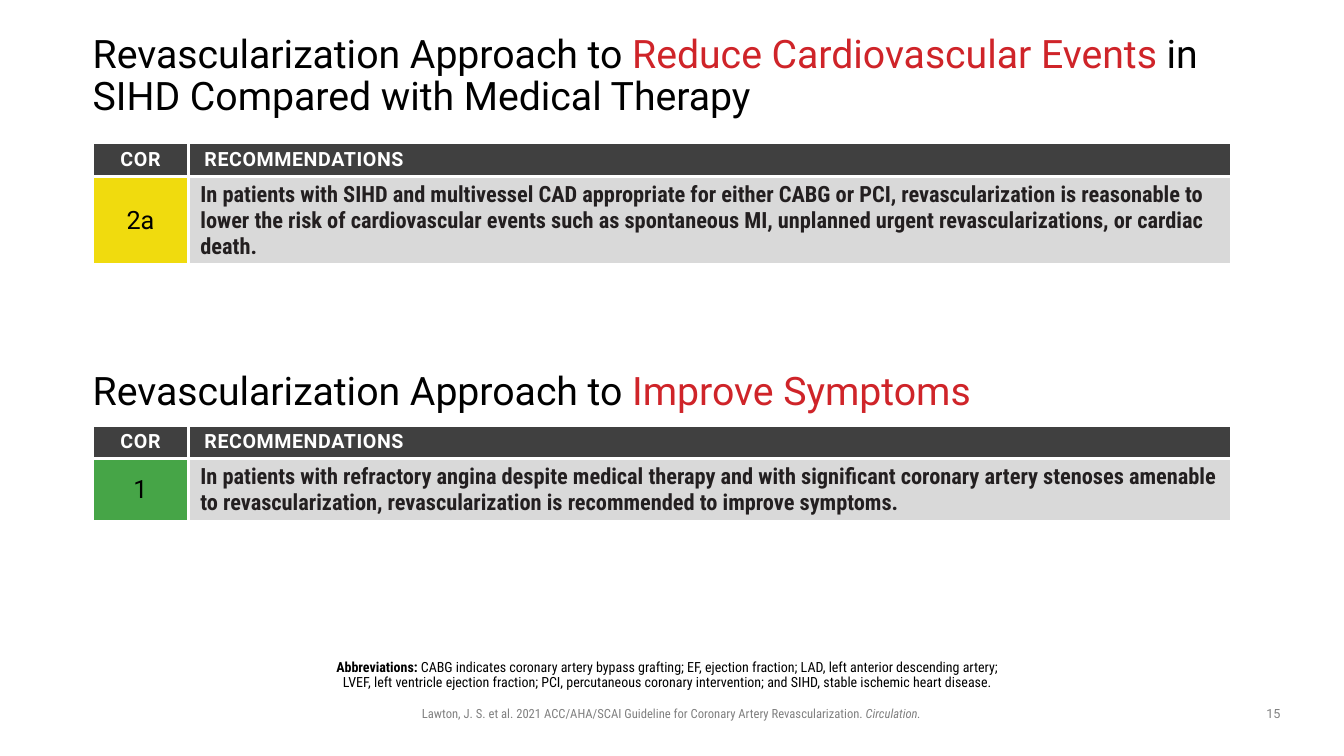
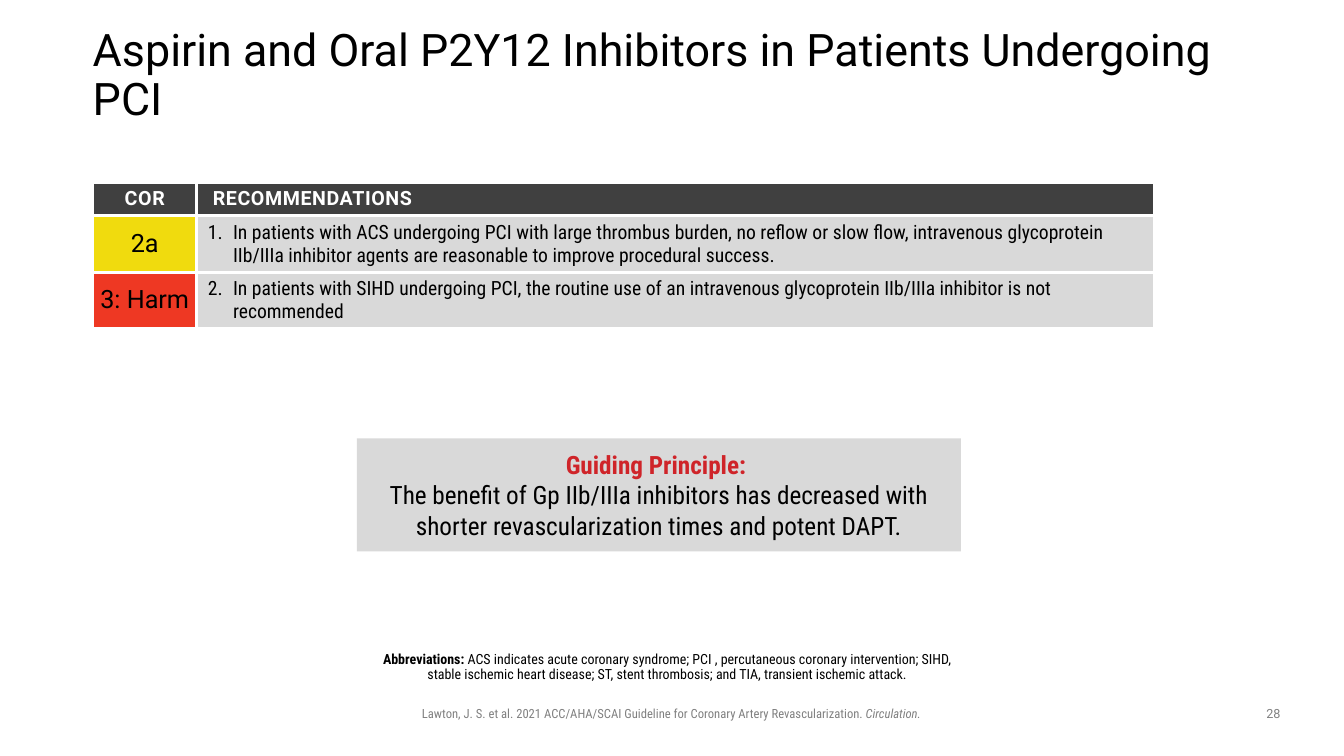
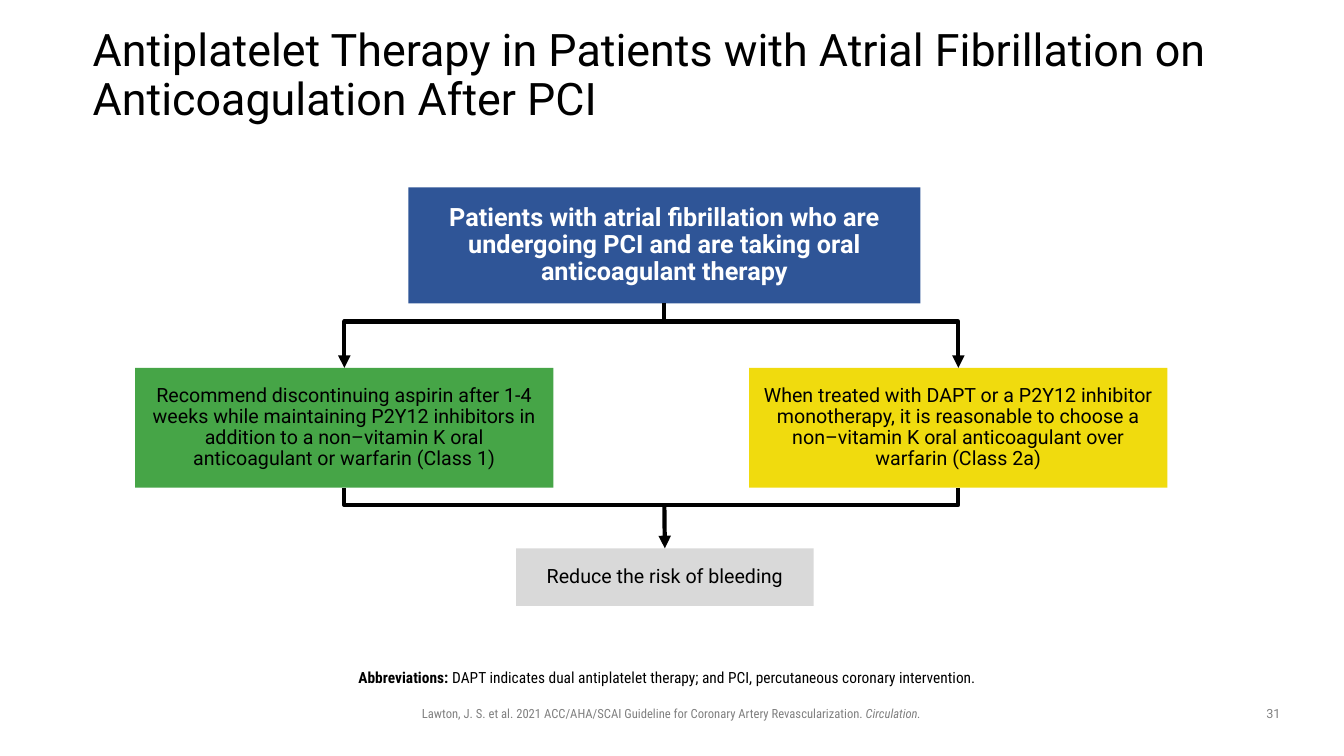
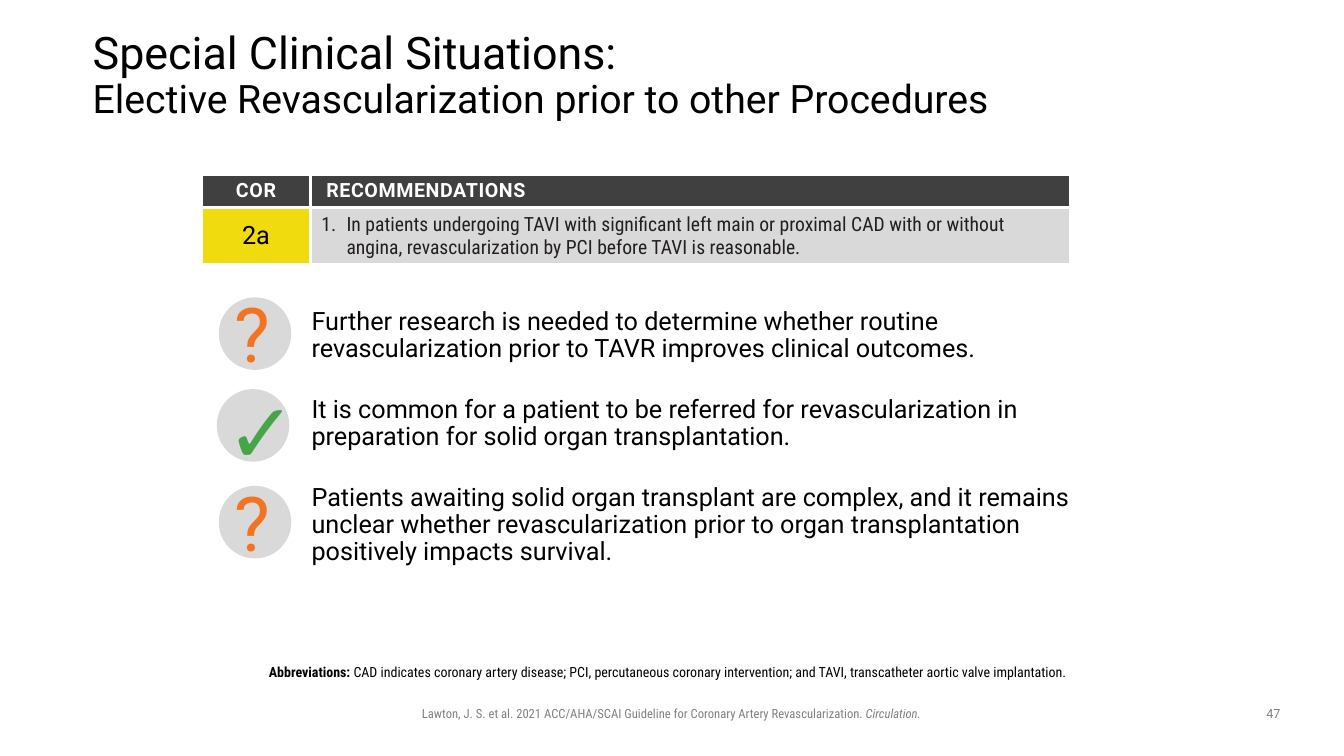
from copy import deepcopy
from typing import NamedTuple

from lxml.etree import SubElement
from pptx import Presentation
from pptx.dml.color import RGBColor
from pptx.enum.shapes import MSO_CONNECTOR, MSO_SHAPE
from pptx.enum.text import MSO_ANCHOR, MSO_AUTO_SIZE, PP_ALIGN
from pptx.oxml.ns import qn
from pptx.util import Inches, Pt

BLACK = RGBColor(0x00, 0x00, 0x00)
WHITE = RGBColor(0xFF, 0xFF, 0xFF)
INK = RGBColor(0x23, 0x1F, 0x20)
CHARCOAL = RGBColor(0x40, 0x40, 0x40)
GRAY = RGBColor(0x80, 0x80, 0x80)
SILVER = RGBColor(0xD9, 0xD9, 0xD9)
CRIMSON = RGBColor(0xCF, 0x24, 0x29)
BLUE = RGBColor(0x2F, 0x55, 0x97)
ORANGE = RGBColor(0xF4, 0x73, 0x20)
GREEN = RGBColor(0x46, 0xA5, 0x47)
YELLOW = RGBColor(0xF0, 0xDB, 0x0E)
RED = RGBColor(0xEE, 0x38, 0x23)

ROBOTO = "Roboto"
CONDENSED = "Roboto Condensed"
COR_COLORS = {"1": GREEN, "2a": YELLOW, "3: Harm": RED}
TITLE_ONE_BODY, TITLE_TWO_BODIES = 1, 3


class Box(NamedTuple):
    left: int
    top: int
    width: int
    height: int

    def x(self, share):
        return int(self.left + self.width * share / 100)

    def y(self, share):
        return int(self.top + self.height * share / 100)

    def inner(self, left, top, width, height):
        """Return an inner box, given in percent of this one."""
        return Box(self.x(left), self.y(top),
                   int(self.width * width / 100), int(self.height * height / 100))


SLIDE = Box(0, 0, Inches(13.33), Inches(7.5))
TITLE = SLIDE.inner(6.9, 5.33, 86.27, 9.6)
FOOTER = SLIDE.inner(23.78, 92.67, 52.36, 3.33)
PAGE_NUMBER = SLIDE.inner(93.17, 92.67, 3.15, 3.47)
HEADER_HEIGHT = int(SLIDE.height * 0.043)


def add_run(paragraph, text, size, color=BLACK, font=ROBOTO, bold=False,
            italic=False, spacing=None):
    run = paragraph.add_run()
    run.text = text
    run.font.size = Pt(size)
    run.font.name = font
    run.font.bold = bold
    run.font.italic = italic
    run.font.color.rgb = color
    if spacing:
        run._r.get_or_add_rPr().set("spc", str(spacing))


def break_line(paragraph):
    """Break after the last run, keeping that run's size for the break."""
    last_format = paragraph.runs[-1]._r.rPr
    paragraph.add_line_break()
    paragraph._p[-1].append(deepcopy(last_format))


def indent(paragraph, left, first=0, number=None):
    """Set the indents in inches, with a list number or no bullet."""
    properties = paragraph._p.get_or_add_pPr()
    properties.set("marL", str(Inches(left)))
    properties.set("indent", str(Inches(first)))
    if number is None:
        SubElement(properties, qn("a:buNone"))
    else:
        SubElement(properties, qn("a:buAutoNum"), type="arabicPeriod", startAt=str(number))


def set_frame(frame, anchor=MSO_ANCHOR.TOP, margins=(0.1, 0.05, 0.1, 0.05)):
    frame.word_wrap = True
    frame.auto_size = MSO_AUTO_SIZE.NONE
    frame.vertical_anchor = anchor
    (frame.margin_left, frame.margin_top,
     frame.margin_right, frame.margin_bottom) = map(Inches, margins)
    return frame.paragraphs[0]


def move(placeholder, box):
    placeholder.left, placeholder.top, placeholder.width, placeholder.height = box


def add_label(slide, box):
    return set_frame(slide.shapes.add_textbox(*box).text_frame)


def add_panel(slide, box, color, shape=MSO_SHAPE.RECTANGLE):
    panel = slide.shapes.add_shape(shape, *box)
    panel.shadow.inherit = False
    panel.fill.solid()
    panel.fill.fore_color.rgb = color
    panel.line.fill.background()
    return panel


def format_heading(frame):
    heading = set_frame(frame, MSO_ANCHOR.MIDDLE, (0, 0, 0, 0))
    heading.alignment = PP_ALIGN.LEFT
    heading.line_spacing = 0.9
    return heading


def start_slide(deck, page, layout=TITLE_ONE_BODY):
    """Add a slide with footer and page number; return it and its title paragraph."""
    slide = deck.slides.add_slide(deck.slide_layouts[layout])
    citation = add_label(slide, FOOTER)
    citation.alignment = PP_ALIGN.CENTER
    add_run(citation, "Lawton, J. S. et al. 2021 ACC/AHA/SCAI Guideline for Coronary "
            "Artery Revascularization. ", 9, GRAY, CONDENSED)
    add_run(citation, "Circulation.", 9, GRAY, CONDENSED, italic=True)
    page_number = add_label(slide, PAGE_NUMBER)
    page_number.alignment = PP_ALIGN.CENTER
    add_run(page_number, str(page), 9, GRAY)
    move(slide.shapes.title, TITLE)
    return slide, format_heading(slide.shapes.title.text_frame)


def fill_abbreviations(placeholder, box, text, size=10):
    move(placeholder, box)
    note = set_frame(placeholder.text_frame, margins=(0, 0.05, 0.1, 0.05))
    indent(note, 0)
    note.alignment = PP_ALIGN.CENTER
    note.line_spacing = 0.9
    note.space_before = Pt(0)
    add_run(note, "Abbreviations: ", size, font=CONDENSED, bold=True)
    add_run(note, text, size, font=CONDENSED)


def format_cell(cell, color, margins=None):
    """Fill and border a cell; return its paragraph."""
    cell.fill.solid()
    cell.fill.fore_color.rgb = color
    cell.vertical_anchor = MSO_ANCHOR.MIDDLE
    if margins:
        cell.margin_left = cell.margin_right = Inches(margins)
        cell.margin_top = cell.margin_bottom = Inches(margins)
    properties = cell._tc.get_or_add_tcPr()
    for position, side in enumerate(("lnL", "lnR", "lnT", "lnB")):
        border = SubElement(properties, qn(f"a:{side}"), w=str(Pt(2.25)))
        fill = SubElement(border, qn("a:solidFill"))
        SubElement(fill, qn("a:srgbClr"), val=str(WHITE))
        properties.insert(position, border)
    return cell.text_frame.paragraphs[0]


def add_recommendations(slide, box, cor_share, recommendations, size=14,
                        color=INK, bold=False, numbered=True):
    """Draw the table of (class of recommendation, text) pairs."""
    table = slide.shapes.add_table(len(recommendations) + 1, 2, *box).table
    table.horz_banding = False
    table.columns[0].width = int(box.width * cor_share)
    table.columns[1].width = box.width - table.columns[0].width
    table.rows[0].height = HEADER_HEIGHT

    cor_header = format_cell(table.cell(0, 0), CHARCOAL)
    cor_header.alignment = PP_ALIGN.CENTER
    add_run(cor_header, "COR", 14, WHITE, bold=True, spacing=50)
    text_header = format_cell(table.cell(0, 1), CHARCOAL)
    indent(text_header, 0.06)
    add_run(text_header, "RECOMMENDATIONS", 14, WHITE, bold=True, spacing=40)

    for number, (cor, text) in enumerate(recommendations, 1):
        table.rows[number].height = (box.height - HEADER_HEIGHT) // len(recommendations)
        rating = format_cell(table.cell(number, 0), COR_COLORS[cor], 0.05)
        rating.alignment = PP_ALIGN.CENTER
        add_run(rating, cor, 18)
        advice = format_cell(table.cell(number, 1), SILVER, 0.05)
        if numbered:
            indent(advice, 0.31, -0.25, number)
        else:
            indent(advice, 0.07)
        add_run(advice, text, size, color, CONDENSED, bold)


def add_guiding_principle(slide, box, text):
    principle = set_frame(add_panel(slide, box, SILVER).text_frame,
                          MSO_ANCHOR.MIDDLE, (0.18, 0.05, 0.18, 0.05))
    principle.alignment = PP_ALIGN.CENTER
    add_run(principle, "Guiding Principle: ", 18, CRIMSON, CONDENSED, bold=True)
    break_line(principle)
    add_run(principle, text, 18, font=CONDENSED)


def add_step(slide, box, fill, text, size=14, color=BLACK, bold=False):
    step = add_panel(slide, box, fill)
    label = set_frame(step.text_frame, MSO_ANCHOR.MIDDLE, (0.1, 0, 0.1, 0))
    label.alignment = PP_ALIGN.CENTER
    label.line_spacing = 0.9
    add_run(label, text, size, color, bold=bold)
    return step


def style_line(line_shape, arrow_end=None):
    """Draw the line thick and black; arrow_end is headEnd or tailEnd."""
    line_shape.line.color.rgb = BLACK
    line_shape.line.width = Pt(3)
    properties = line_shape._element.spPr
    if arrow_end:
        SubElement(properties.find(qn("a:ln")), qn(f"a:{arrow_end}"), type="triangle")
    SubElement(properties, qn("a:effectLst"))


def add_route(slide, points, arrow_end=None):
    builder = slide.shapes.build_freeform(*points[0])
    builder.add_line_segments(points[1:], close=False)
    route = builder.convert_to_shape()
    route.fill.background()
    style_line(route, arrow_end)


def add_therapy_flow(slide, box):
    patients = add_step(
        slide, box.inner(26.46, 0, 49.61, 27.71), BLUE,
        "Patients with atrial fibrillation who are undergoing PCI and are taking oral "
        "anticoagulant therapy", 18, WHITE, bold=True)
    therapies = [
        add_step(slide, box.inner(left, 43.13, 40.53, 28.67), color, text)
        for left, color, text in (
            (0, GREEN, "Recommend discontinuing aspirin after 1-4 weeks while maintaining "
             "P2Y12 inhibitors in addition to a non–vitamin K oral anticoagulant or "
             "warfarin (Class 1)"),
            (59.47, YELLOW, "When treated with DAPT or a P2Y12 inhibitor monotherapy, it is "
             "reasonable to choose a non–vitamin K oral anticoagulant over warfarin "
             "(Class 2a)"))]
    outcome = add_step(slide, box.inner(36.91, 86.27, 28.81, 13.73), SILVER,
                       "Reduce the risk of bleeding")

    center = patients.left + patients.width // 2
    split, merge = box.y(32.05), box.y(75.9)
    middles = [therapy.left + therapy.width // 2 for therapy in therapies]
    therapy_top = therapies[0].top
    therapy_bottom = therapy_top + therapies[0].height

    stem = slide.shapes.add_connector(MSO_CONNECTOR.STRAIGHT, center, split, center, split)
    stem.begin_connect(patients, 2)
    style_line(stem)
    for middle in middles:
        add_route(slide, [(middle, therapy_top), (middle, split), (center, split)], "headEnd")
    left, right = middles
    add_route(slide, [(right, therapy_bottom), (right, merge),
                      (left, merge), (left, therapy_bottom)])
    result = slide.shapes.add_connector(MSO_CONNECTOR.STRAIGHT, center, merge, center, merge)
    result.end_connect(outcome, 0)
    style_line(result, "tailEnd")


def add_mark(slide, circle, glyph, size, color, font, offset):
    add_panel(slide, circle, SILVER, MSO_SHAPE.OVAL)
    mark = add_label(slide, circle.inner(offset, -20.5, 75, 140))
    add_run(mark, glyph, size, color, font)


def fill_statements(placeholder, box, statements):
    move(placeholder, box)
    frame = placeholder.text_frame
    set_frame(frame)
    for position, text in enumerate(statements):
        statement = frame.add_paragraph() if position else frame.paragraphs[0]
        indent(statement, 0)
        statement.line_spacing = 0.9
        statement.space_before = Pt(24 if position else 0)
        add_run(statement, text, 18)


def build_approach_slide(deck):
    slide, title = start_slide(deck, 15)
    add_run(title, "Revascularization Approach to ", 28)
    add_run(title, "Reduce Cardiovascular Events ", 28, CRIMSON)
    add_run(title, "in SIHD Compared with Medical Therapy", 28)
    add_recommendations(
        slide, SLIDE.inner(6.9, 18.93, 84.7, 16), 0.084,
        [("2a", "In patients with SIHD and multivessel CAD appropriate for either CABG or "
          "PCI, revascularization is reasonable to lower the risk of cardiovascular events "
          "such as spontaneous MI, unplanned urgent revascularizations, or cardiac death.")],
        16, bold=True, numbered=False)

    symptoms_box = slide.shapes.add_textbox(*SLIDE.inner(6.9, 47.2, 86.27, 9.6))
    symptoms = format_heading(symptoms_box.text_frame)
    add_run(symptoms, "Revascularization Approach to ", 28)
    add_run(symptoms, "Improve Symptoms", 28, CRIMSON)
    add_recommendations(
        slide, SLIDE.inner(6.9, 56.27, 84.7, 12.4), 0.084,
        [("1", "In patients with refractory angina despite medical therapy and with "
          "significant coronary artery stenoses amenable to revascularization, "
          "revascularization is recommended to improve symptoms.")],
        16, bold=True, numbered=False)
    fill_abbreviations(
        slide.placeholders[1], SLIDE.inner(24.08, 86.67, 51.84, 4),
        "CABG indicates coronary artery bypass grafting; EF, ejection fraction; LAD, left "
        "anterior descending artery; LVEF, left ventricle ejection fraction; PCI, "
        "percutaneous coronary intervention; and SIHD, stable ischemic heart disease.")


def build_inhibitors_slide(deck):
    slide, title = start_slide(deck, 28)
    add_run(title, "Aspirin and Oral P2Y12 Inhibitors in Patients Undergoing PCI", 32)
    add_recommendations(
        slide, SLIDE.inner(6.9, 24.13, 79, 19.2), 0.098,
        [("2a", "In patients with ACS undergoing PCI with large thrombus burden, no reflow "
          "or slow flow, intravenous glycoprotein IIb/IIIa inhibitor agents are reasonable "
          "to improve procedural success."),
         ("3: Harm", "In patients with SIHD undergoing PCI, the routine use of an "
          "intravenous glycoprotein IIb/IIIa inhibitor is not recommended")],
        color=BLACK)
    add_guiding_principle(
        slide, SLIDE.inner(26.56, 58, 44.94, 14.93),
        "The benefit of Gp IIb/IIIa inhibitors has decreased with shorter "
        "revascularization times and potent DAPT.")
    fill_abbreviations(
        slide.placeholders[1], SLIDE.inner(28.28, 85.6, 43.44, 5.33),
        "ACS indicates acute coronary syndrome; PCI , percutaneous coronary intervention; "
        "SIHD, stable ischemic heart disease; ST, stent thrombosis; and TIA, transient "
        "ischemic attack.")


def build_fibrillation_slide(deck):
    slide, title = start_slide(deck, 31)
    add_run(title, "Antiplatelet Therapy in Patients with Atrial Fibrillation on "
            "Anticoagulation After PCI", 32)
    add_therapy_flow(slide, SLIDE.inner(10.05, 24.8, 76.82, 55.33))
    fill_abbreviations(
        slide.placeholders[1], SLIDE.inner(6.9, 88, 86.27, 4),
        "DAPT indicates dual antiplatelet therapy; and PCI, percutaneous coronary "
        "intervention.", 11)


def build_situations_slide(deck):
    slide, title = start_slide(deck, 47, TITLE_TWO_BODIES)
    add_run(title, "Special Clinical Situations: ", 32)
    break_line(title)
    add_run(title, "Elective Revascularization prior to other Procedures", 28)
    add_recommendations(
        slide, SLIDE.inner(15, 23.07, 64.67, 11.73), 0.125,
        [("2a", "In patients undergoing TAVI with significant left main or proximal CAD "
          "with or without angina, revascularization by PCI before TAVI is reasonable.")])
    statements, abbreviations = list(slide.placeholders)[1:]
    fill_statements(statements, SLIDE.inner(22.43, 40.13, 58.36, 36.13), [
        "Further research is needed to determine whether routine revascularization prior "
        "to TAVR improves clinical outcomes.",
        "It is common for a patient to be referred for revascularization in preparation "
        "for solid organ transplantation.",
        "Patients awaiting solid organ transplant are complex, and it remains unclear "
        "whether revascularization prior to organ transplantation positively impacts "
        "survival."])
    question = ("?", 54, ORANGE, ROBOTO, 8.33)
    check = ("✓", 60, GREEN, "Calibri", 0)
    for left, top, mark in ((16.28, 39.33, question), (16.13, 51.47, check),
                            (16.28, 64.27, question)):
        add_mark(slide, SLIDE.inner(left, top, 5.4, 9.6), *mark)
    fill_abbreviations(
        abbreviations, SLIDE.inner(6.9, 87.33, 86.27, 4),
        "CAD indicates coronary artery disease; PCI, percutaneous coronary intervention; "
        "and TAVI, transcatheter aortic valve implantation.")


def main():
    deck = Presentation()
    deck.slide_width, deck.slide_height = SLIDE.width, SLIDE.height
    build_approach_slide(deck)
    build_inhibitors_slide(deck)
    build_fibrillation_slide(deck)
    build_situations_slide(deck)
    deck.save("out.pptx")


if __name__ == "__main__":
    main()
